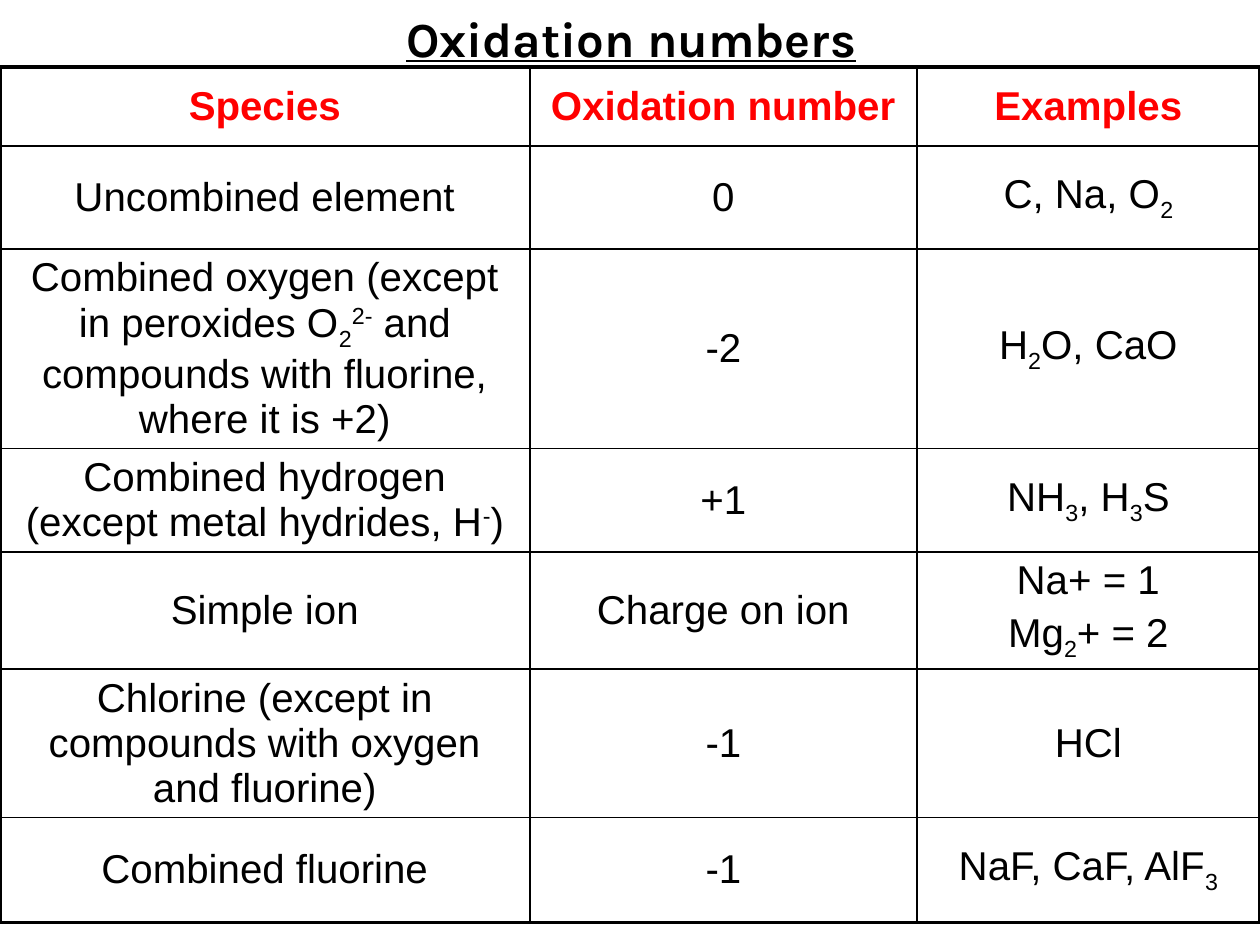
"""Build a slide with a table of oxidation number rules."""
import pptx
import pptx.util
import pptx.dml.color
import pptx.enum.text
import lxml.etree

PX = 914400 // 126
BLACK = pptx.dml.color.RGBColor(0, 0, 0)
RED = pptx.dml.color.RGBColor(255, 0, 0)
BASELINES = {"_": "-25000", "^": "30000"}
COLS = [530, 387, 343]
ROW_HEIGHTS = [79, 103, 105, 103, 103, 105, 105]
ROWS = [
    ["Species", "Oxidation number", "Examples"],
    ["Uncombined element", "0", "C, Na, O|_2"],
    ["Combined oxygen (except in peroxides O|_2|^2-| and compounds with fluorine, where it is +2)",
     "-2", "H|_2|O, CaO"],
    ["Combined hydrogen (except metal hydrides, H|^-|)", "+1", "NH|_3|, H|_3|S"],
    ["Simple ion", "Charge on ion", "Na+ = 1\nMg|_2|+ = 2"],
    ["Chlorine (except in compounds with oxygen and fluorine)", "-1", "HCl"],
    ["Combined fluorine", "-1", "NaF, CaF, AlF|_3"],
]


def write(tf, text, size=23, font="Arial", color=BLACK, bold=False, underline=False, before=None):
    """Write lines of runs split by bars; _ marks a subscript and ^ a superscript."""
    for i, line in enumerate(text.split("\n")):
        p = tf.add_paragraph() if i else tf.paragraphs[0]
        p.alignment = pptx.enum.text.PP_ALIGN.CENTER
        if before:
            p.space_before = pptx.util.Pt(0)
            spacing = p._p.pPr.find(pptx.oxml.ns.qn("a:spcBef"))
            spacing.clear()
            lxml.etree.SubElement(spacing, pptx.oxml.ns.qn("a:spcPct"), val=str(before * 1000))
        for part in line.split("|"):
            r = p.add_run()
            r.text = part.lstrip("_^")
            r.font.size = pptx.util.Pt(size)
            r.font.name = font
            r.font.bold = bold
            r.font.underline = underline
            r.font.color.rgb = color
            if part[0] in BASELINES:
                r.font._element.set("baseline", BASELINES[part[0]])


def set_borders(cell, widths):
    tcPr = cell._tc.get_or_add_tcPr()
    for i, (side, width) in enumerate(zip("LRTB", widths)):
        ln = lxml.etree.Element(pptx.oxml.ns.qn("a:ln" + side), w=str(pptx.util.Pt(width)))
        fill = lxml.etree.SubElement(ln, pptx.oxml.ns.qn("a:solidFill"))
        lxml.etree.SubElement(fill, pptx.oxml.ns.qn("a:srgbClr"), val=str(BLACK))
        tcPr.insert(i, ln)


prs = pptx.Presentation()
prs.slide_width = 1260 * PX
prs.slide_height = 945 * PX
s = prs.slides.add_slide(prs.slide_layouts[5])

title = s.shapes.title
title.left, title.top, title.width, title.height = 64 * PX, 0, 1134 * PX, 76 * PX
tf = title.text_frame
tf.word_wrap = True
tf.auto_size = pptx.enum.text.MSO_AUTO_SIZE.NONE
tf.vertical_anchor = pptx.enum.text.MSO_ANCHOR.MIDDLE
write(tf, "Oxidation numbers", size=28, font="Karla", bold=True, underline=True)

table = s.shapes.add_table(len(ROWS), len(COLS), 0, 67 * PX, 1260 * PX, 878 * PX).table
table.first_row = False
table.horz_banding = False
for column, width in zip(table.columns, COLS):
    column.width = width * PX
for row, height in zip(table.rows, ROW_HEIGHTS):
    row.height = height * PX

last_row, last_col = len(ROWS) - 1, len(COLS) - 1
for i, texts in enumerate(ROWS):
    for j, text in enumerate(texts):
        cell = table.cell(i, j)
        cell.fill.background()
        cell.vertical_anchor = pptx.enum.text.MSO_ANCHOR.MIDDLE
        write(cell.text_frame, text, color=BLACK if i else RED, bold=i == 0, before=20)
        outer = [j == 0, j == last_col, i == 0, i == last_row]
        set_borders(cell, [2.25 if edge else 1 for edge in outer])

prs.save("out.pptx")
